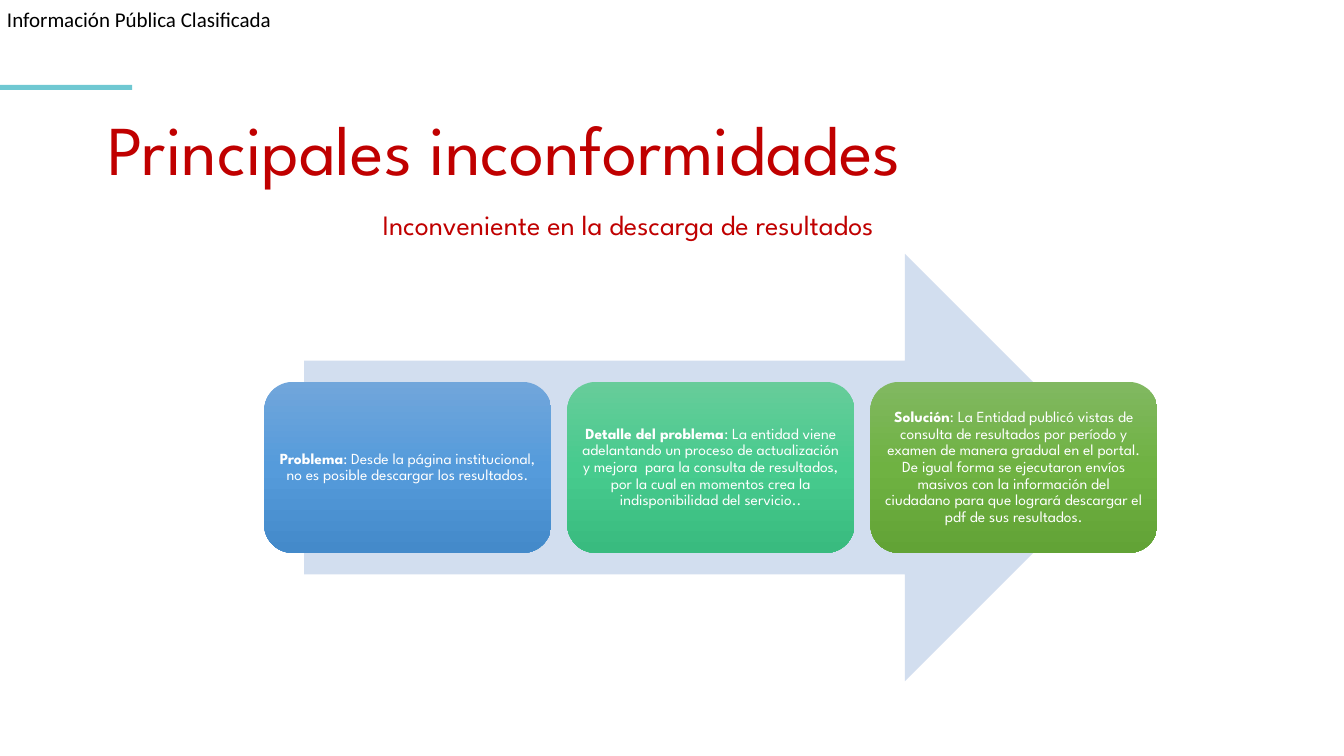
from copy import deepcopy
from dataclasses import dataclass

from pptx import Presentation
from pptx.dml.color import RGBColor
from pptx.enum.shapes import MSO_SHAPE
from pptx.enum.text import MSO_ANCHOR, MSO_AUTO_SIZE, PP_ALIGN
from pptx.oxml.ns import qn
from pptx.shapes.autoshape import Shape
from pptx.slide import Slide
from pptx.text.text import _Paragraph
from pptx.util import Pt

RECTANGLE = MSO_SHAPE.RECTANGLE
ROUNDED = MSO_SHAPE.ROUNDED_RECTANGLE
RIGHT_ARROW = MSO_SHAPE.RIGHT_ARROW
LEFT = PP_ALIGN.LEFT
CENTER = PP_ALIGN.CENTER
MIDDLE = MSO_ANCHOR.MIDDLE
FIT_SHAPE = MSO_AUTO_SIZE.SHAPE_TO_FIT_TEXT

BLACK = RGBColor(0x00, 0x00, 0x00)
WHITE = RGBColor(0xFF, 0xFF, 0xFF)
RED = RGBColor(0xC0, 0x00, 0x00)
TEAL = RGBColor(0x6F, 0xC8, 0xD2)
PALE_BLUE = RGBColor(0xD2, 0xDE, 0xEF)
BLUES = (RGBColor(0x71, 0xA6, 0xDB), RGBColor(0x55, 0x9B, 0xDB), RGBColor(0x44, 0x8A, 0xCA))
MINTS = (RGBColor(0x67, 0xCC, 0x9A), RGBColor(0x47, 0xCB, 0x8E), RGBColor(0x39, 0xBB, 0x7F))
GREENS = (RGBColor(0x81, 0xB8, 0x61), RGBColor(0x6F, 0xB2, 0x42), RGBColor(0x62, 0xA3, 0x36))

BODY_FONT = "League Spartan"
LABEL_FONT = "Calibri"

CARD_LEFT, CARD_TOP = 188.7, 272.8
CARD_WIDTH, CARD_HEIGHT = 205.1, 122.1
CARD_PITCH = 216.5
CARD_INSET = 3.6


@dataclass(frozen=True)
class Frame:
    left: float
    top: float
    width: float
    height: float


@dataclass(frozen=True)
class Heading:
    text: str
    frame: Frame
    size: float
    font: str
    color: RGBColor
    align: PP_ALIGN
    inset_x: float
    inset_y: float


@dataclass(frozen=True)
class Card:
    label: str
    detail: str
    colors: tuple[RGBColor, RGBColor, RGBColor]


HEADINGS = (
    Heading("Información Pública Clasificada", Frame(5, 5, 193, 18),
            15, LABEL_FONT, BLACK, LEFT, 0, 0),
    Heading("Principales inconformidades", Frame(35.3, 72, 650, 67.7),
            50, BODY_FONT, RED, CENTER, 7.2, 3.6),
    Heading("Inconveniente en la descarga de resultados", Frame(246.2, 144.7, 405.4, 31.7),
            20, BODY_FONT, RED, CENTER, 7.2, 3.6),
)

CARDS = (
    Card("Problema",
         ": Desde la página institucional, no es posible descargar los resultados.",
         BLUES),
    Card("Detalle del problema",
         ": La entidad viene adelantando un proceso de actualización y mejora  para la "
         "consulta de resultados, por la cual en momentos crea la indisponibilidad "
         "del servicio..",
         MINTS),
    Card("Solución",
         ": La Entidad publicó vistas de consulta de resultados por período y examen de "
         "manera gradual en el portal. De igual forma se ejecutaron envíos masivos con la "
         "información del ciudadano para que logrará descargar el pdf de sus resultados.",
         GREENS),
)


def add_span(para: _Paragraph, text: str, size: float, font: str,
             color: RGBColor, bold: bool = False) -> None:
    span = para.add_run()
    span.text = text
    span.font.size = Pt(size)
    span.font.name = font
    span.font.bold = bold
    span.font.color.rgb = color


def set_insets(box: Shape, x: float, y: float) -> None:
    text = box.text_frame
    text.margin_left = text.margin_right = Pt(x)
    text.margin_top = text.margin_bottom = Pt(y)


def add_plain_shape(page: Slide, kind: MSO_SHAPE, frame: Frame) -> Shape:
    """Add a shape without outline or shadow."""
    shape = page.shapes.add_shape(kind, Pt(frame.left), Pt(frame.top),
                                  Pt(frame.width), Pt(frame.height))
    shape.shadow.inherit = False
    shape.line.fill.background()
    return shape


def add_solid_shape(page: Slide, kind: MSO_SHAPE, frame: Frame, color: RGBColor) -> None:
    shape = add_plain_shape(page, kind, frame)
    shape.fill.solid()
    shape.fill.fore_color.rgb = color


def fill_downward(shape: Shape, colors: tuple[RGBColor, RGBColor, RGBColor]) -> None:
    """Fill with three evenly spaced gradient stops, from top to bottom."""
    shape.fill.gradient()
    shape.fill.gradient_angle = 270
    first_stop = shape.element.spPr.find(".//" + qn("a:gs"))
    first_stop.addnext(deepcopy(first_stop))
    for index, (stop, color) in enumerate(zip(shape.fill.gradient_stops, colors)):
        stop.position = index / 2
        stop.color.rgb = color


def add_heading(page: Slide, heading: Heading) -> None:
    frame = heading.frame
    box = page.shapes.add_textbox(Pt(frame.left), Pt(frame.top),
                                  Pt(frame.width), Pt(frame.height))
    set_insets(box, heading.inset_x, heading.inset_y)
    box.text_frame.word_wrap = False
    box.text_frame.auto_size = FIT_SHAPE
    para = box.text_frame.paragraphs[0]
    para.alignment = heading.align
    add_span(para, heading.text, heading.size, heading.font, heading.color)


def add_card(page: Slide, card: Card, column: int) -> None:
    frame = Frame(CARD_LEFT + column * CARD_PITCH, CARD_TOP, CARD_WIDTH, CARD_HEIGHT)
    box = add_plain_shape(page, ROUNDED, frame)
    fill_downward(box, card.colors)
    set_insets(box, CARD_INSET, CARD_INSET)
    box.text_frame.word_wrap = True
    box.text_frame.vertical_anchor = MIDDLE
    para = box.text_frame.paragraphs[0]
    para.alignment = CENTER
    para.line_spacing = 0.9
    add_span(para, card.label, 11, BODY_FONT, WHITE, bold=True)
    add_span(para, card.detail, 11, BODY_FONT, WHITE)


def main() -> None:
    deck = Presentation()
    deck.slide_width, deck.slide_height = Pt(960), Pt(540)
    page = deck.slides.add_slide(deck.slide_layouts[6])
    add_solid_shape(page, RECTANGLE, Frame(0, 60.7, 94.5, 3.6), TEAL)
    for heading in HEADINGS:
        add_heading(page, heading)
    add_solid_shape(page, RIGHT_ARROW, Frame(217.2, 181.3, 581.8, 305.3), PALE_BLUE)
    for column, card in enumerate(CARDS):
        add_card(page, card, column)
    deck.save("out.pptx")


if __name__ == "__main__":
    main()
